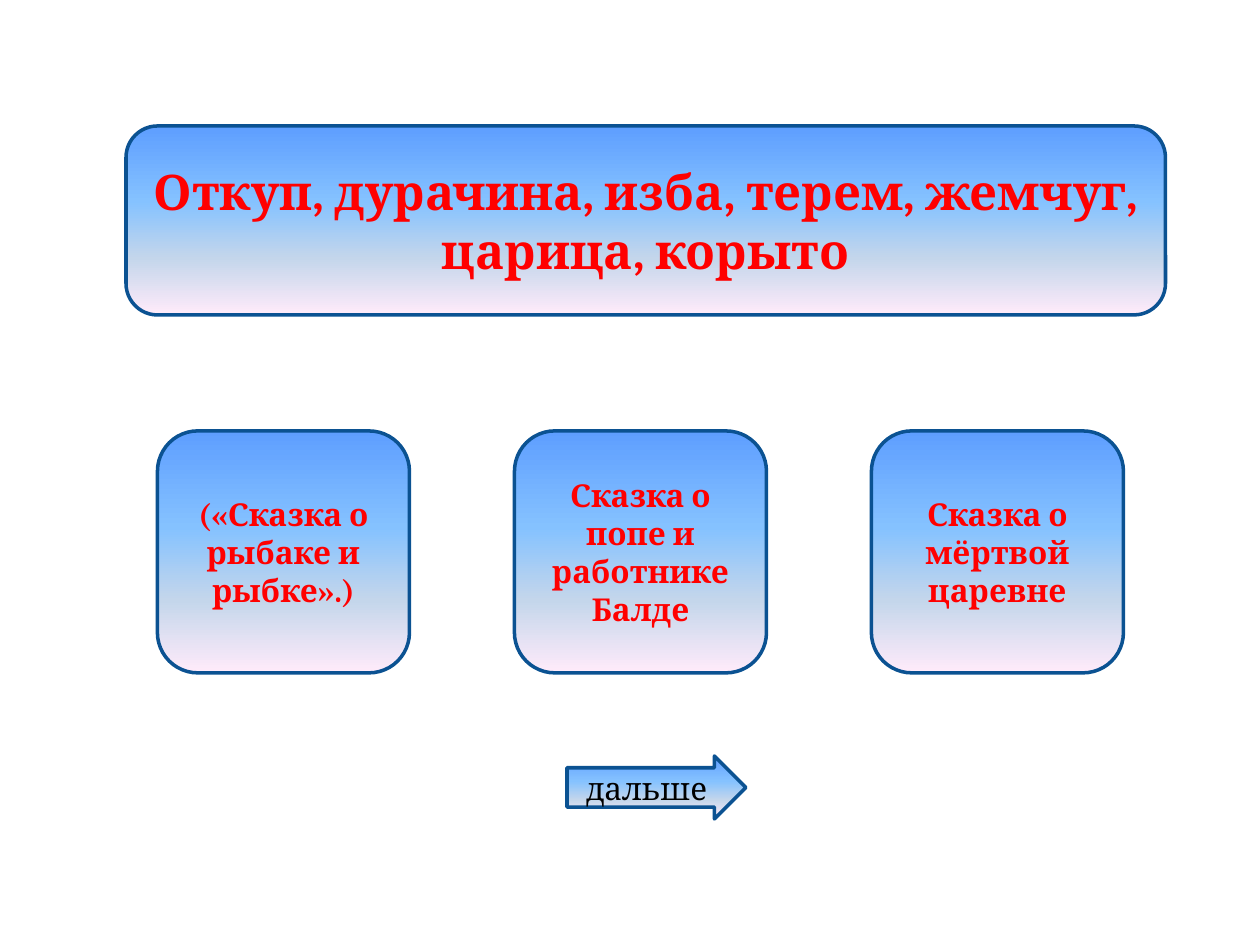
import pptx
import pptx.dml.color
import pptx.enum.shapes
import pptx.enum.text
import pptx.oxml.ns
import pptx.util
from lxml import etree

Inches = pptx.util.Inches
SHAPE = pptx.enum.shapes.MSO_SHAPE
qn = pptx.oxml.ns.qn

FONT = "Cambria"
RED = "FF0000"
BLACK = "000000"
OUTLINE = "0B5292"
GRADIENT = [(0, "5E9EFF"), (40, "85C2FF"), (70, "C4D6EB"), (100, "FFEBFA")]
TALES = [
    "(«Сказка о рыбаке и\nрыбке».)",
    "Сказка о попе и работнике Балде",
    "Сказка о мёртвой царевне",
]


def color(value):
    return pptx.dml.color.RGBColor.from_string(value)


def set_gradient(sp):
    """Fill a shape from top to bottom with the gradient stops."""
    sp.fill.gradient()
    sp.fill.gradient_angle = 270
    stops = sp._element.spPr.find(".//" + qn("a:gsLst"))
    for stop in list(stops):
        stops.remove(stop)
    for percent, value in GRADIENT:
        gs = etree.SubElement(stops, qn("a:gs"), pos=str(percent * 1000))
        etree.SubElement(gs, qn("a:srgbClr"), val=value)


def add_text(sp, text, size, value, bold):
    tf = sp.text_frame
    tf.word_wrap = True
    tf.vertical_anchor = pptx.enum.text.MSO_ANCHOR.MIDDLE
    p = tf.paragraphs[0]
    p.alignment = pptx.enum.text.PP_ALIGN.CENTER
    for i, line in enumerate(text.split("\n")):
        if i:
            p.add_line_break()
        r = p.add_run()
        r.text = line
        r.font.name = FONT
        r.font.size = pptx.util.Pt(size)
        r.font.bold = bold
        r.font.color.rgb = color(value)


def add_button(s, kind, box, text, size=18, value=RED, bold=True):
    sp = s.shapes.add_shape(kind, *[Inches(n) for n in box])
    sp.shadow.inherit = False
    set_gradient(sp)
    sp.line.color.rgb = color(OUTLINE)
    sp.line.width = pptx.util.Pt(2)
    add_text(sp, text, size, value, bold)
    return sp


def main():
    prs = pptx.Presentation()
    prs.slide_width = Inches(10)
    prs.slide_height = Inches(7.5)
    s = prs.slides.add_slide(prs.slide_layouts[6])

    # Words to match with a tale
    add_button(s, SHAPE.ROUNDED_RECTANGLE, (1, 1, 8.25, 1.5),
               "Откуп, дурачина, изба, терем, жемчуг, царица, корыто", size=28)

    # Row of possible answers
    for i, tale in enumerate(TALES):
        add_button(s, SHAPE.ROUNDED_RECTANGLE,
                   (1.25 + i * 8.5 / 3, 3.42, 2, 1.92), tale)

    # Arrow to the next question
    arrow = add_button(s, SHAPE.RIGHT_ARROW, (4.5, 6, 1.42, 0.5), "дальше",
                       value=BLACK, bold=False)
    arrow.adjustments[0] = 0.625
    arrow.adjustments[1] = 0.5

    prs.save("out.pptx")


if __name__ == "__main__":
    main()
